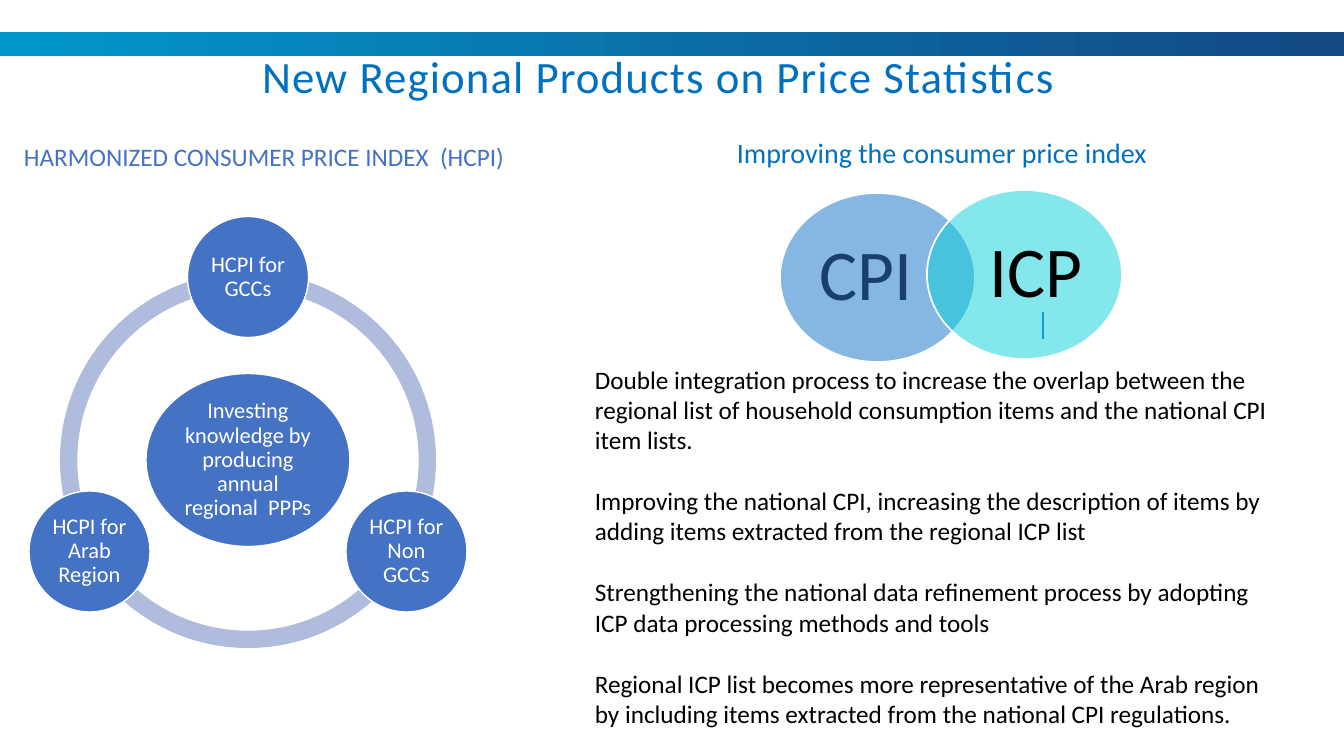
import math
from pptx import Presentation, util as u
from pptx.dml.color import RGBColor
from pptx.enum import shapes, text
from pptx.oxml.ns import qn
from lxml import etree

COLORS = {"bar_start": "0298CA", "bar_end": "134985", "ring": "B0BCDE",
          "node": "4472C4", "heading": "0070C0", "white": "FFFFFF",
          "black": "000000", "cpi": "0F6FC6", "icp": "0BD0D9",
          "cpi_text": "17406D"}
FONT = "Calibri"

TITLE = "New Regional Products on Price Statistics"
LEFT_HEADING = "HARMONIZED CONSUMER PRICE INDEX  (HCPI)"
RIGHT_HEADING = "Improving the consumer price index"
HUB = "Investing knowledge by producing annual regional  PPPs"
NODES = ["HCPI for GCCs", "HCPI for Non GCCs", "HCPI for Arab Region"]
ARCS = [(90, 162), (18, 90), (162, 18)]
VENN = [
    ("CPI", (780, 193), "cpi", "cpi_text", (0, 23)),
    ("ICP", (927, 190), "icp", "black", (23, 0)),
]
BENEFITS = [
    "Double integration process to increase the overlap between the regional list of household consumption items and the national CPI item lists.",
    "Improving the national CPI, increasing the description of items by adding items extracted from the regional ICP list",
    "Strengthening the national data refinement process by adopting ICP data processing methods and tools",
    "Regional ICP list becomes more representative of the Arab region by including items extracted from the national CPI regulations.",
]

RING_CENTER = (248, 460)
RING_SIZE = 376
RING_WIDTH = 0.046
ORBIT = 183
NODE_SIZE = 121
HUB_SIZE = (204, 173)
VENN_SIZE = (195, 169)
SCALE = 914400 / 100.8


def px(n):
    return u.Emu(round(n * SCALE))


def rgb(name):
    return RGBColor.from_string(COLORS[name])


def write(tf, lines, size, color, align=None, spacing=None, gap=0, insets=None):
    tf.word_wrap = True
    if insets:
        tf.margin_left, tf.margin_top, tf.margin_right, tf.margin_bottom = map(px, insets)
    for i, line in enumerate(lines):
        p = tf.add_paragraph() if i else tf.paragraphs[0]
        p.alignment = align
        p.line_spacing = spacing
        if i and gap:
            p.space_before = u.Pt(gap)
        r = p.add_run()
        r.text = line
        r.font.size = u.Pt(size)
        r.font.name = FONT
        r.font.color.rgb = rgb(color)


def add_text(slide, box, lines, size, color, **style):
    tf = slide.shapes.add_textbox(*map(px, box)).text_frame
    write(tf, lines, size, color, **style)
    return tf


def add_shape(slide, kind, box, fill=None, outline=0):
    sp = slide.shapes.add_shape(kind, *map(px, box))
    sp.shadow.inherit = False
    if fill:
        sp.fill.solid()
        sp.fill.fore_color.rgb = rgb(fill)
    if outline:
        sp.line.color.rgb = rgb("white")
        sp.line.width = u.Pt(outline)
    else:
        sp.line.fill.background()
    return sp


def add_oval(slide, box, fill, outline, label, size, color, insets):
    sp = add_shape(slide, shapes.MSO_SHAPE.OVAL, box, fill, outline)
    sp.text_frame.vertical_anchor = text.MSO_ANCHOR.MIDDLE
    write(sp.text_frame, [label], size, color, align=text.PP_ALIGN.CENTER,
          spacing=0.9, insets=insets)
    return sp


def centered(cx, cy, w, h):
    return cx - w / 2, cy - h / 2, w, h


def add_bar(slide):
    sp = add_shape(slide, shapes.MSO_SHAPE.RECTANGLE, (0, 32, 1344, 24))
    sp.fill.gradient()
    sp.fill.gradient_angle = 0
    for stop, position, name in zip(sp.fill.gradient_stops, (0, 1), ("bar_start", "bar_end")):
        stop.position = position
        stop.color.rgb = rgb(name)


def add_cycle(slide):
    cx, cy = RING_CENTER
    for start, end in ARCS:
        sp = add_shape(slide, shapes.MSO_SHAPE.BLOCK_ARC,
                       centered(cx, cy, RING_SIZE, RING_SIZE), "ring")
        for i, value in enumerate((start * 0.6, end * 0.6, RING_WIDTH)):
            sp.adjustments[i] = value
    circles = [(HUB, cx, cy, *HUB_SIZE)]
    for i, label in enumerate(NODES):
        angle = math.radians(360 / len(NODES) * i - 90)
        circles.append((label, cx + ORBIT * math.cos(angle),
                        cy + ORBIT * math.sin(angle), NODE_SIZE, NODE_SIZE))
    for label, *place in circles:
        add_oval(slide, centered(*place), "node", 1, label, 16, "white", (2, 2, 2, 2))


def add_venn(slide):
    for label, corner, fill, color, (left, right) in VENN:
        sp = add_oval(slide, (*corner, *VENN_SIZE), fill, 1.25, label, 51, color,
                      (left, 0, right, 0))
        tint = sp.fill._xPr.find(qn("a:solidFill"))[0]
        etree.SubElement(tint, qn("a:alpha")).set("val", "50000")


def add_tick(slide):
    sp = slide.shapes.add_connector(shapes.MSO_CONNECTOR.STRAIGHT,
                                    px(1043), px(339), px(1043), px(312))
    sp.line.color.rgb = rgb("heading")
    sp.line.width = u.Pt(1)
    etree.SubElement(sp._element.spPr, qn("a:effectLst"))


def main():
    prs = Presentation()
    prs.slide_width, prs.slide_height = px(1344), px(756)
    s = prs.slides.add_slide(prs.slide_layouts[6])
    add_bar(s)
    add_cycle(s)
    add_tick(s)
    title = add_text(s, (49, 50, 1219, 50), [TITLE], 32, "heading",
                     align=text.PP_ALIGN.CENTER, spacing=0.9)
    title.paragraphs[0].runs[0].font._element.set("spc", "80")
    add_text(s, (727, 134, 472, 40), [RIGHT_HEADING], 20, "heading", spacing=0.9)
    add_venn(s)
    heading = add_text(s, (14, 136, 505, 40), [LEFT_HEADING], 18, "node")
    heading.word_wrap = False
    add_text(s, (585, 359, 696, 377), BENEFITS, 18, "black", gap=22)
    prs.save("out.pptx")


if __name__ == "__main__":
    main()
